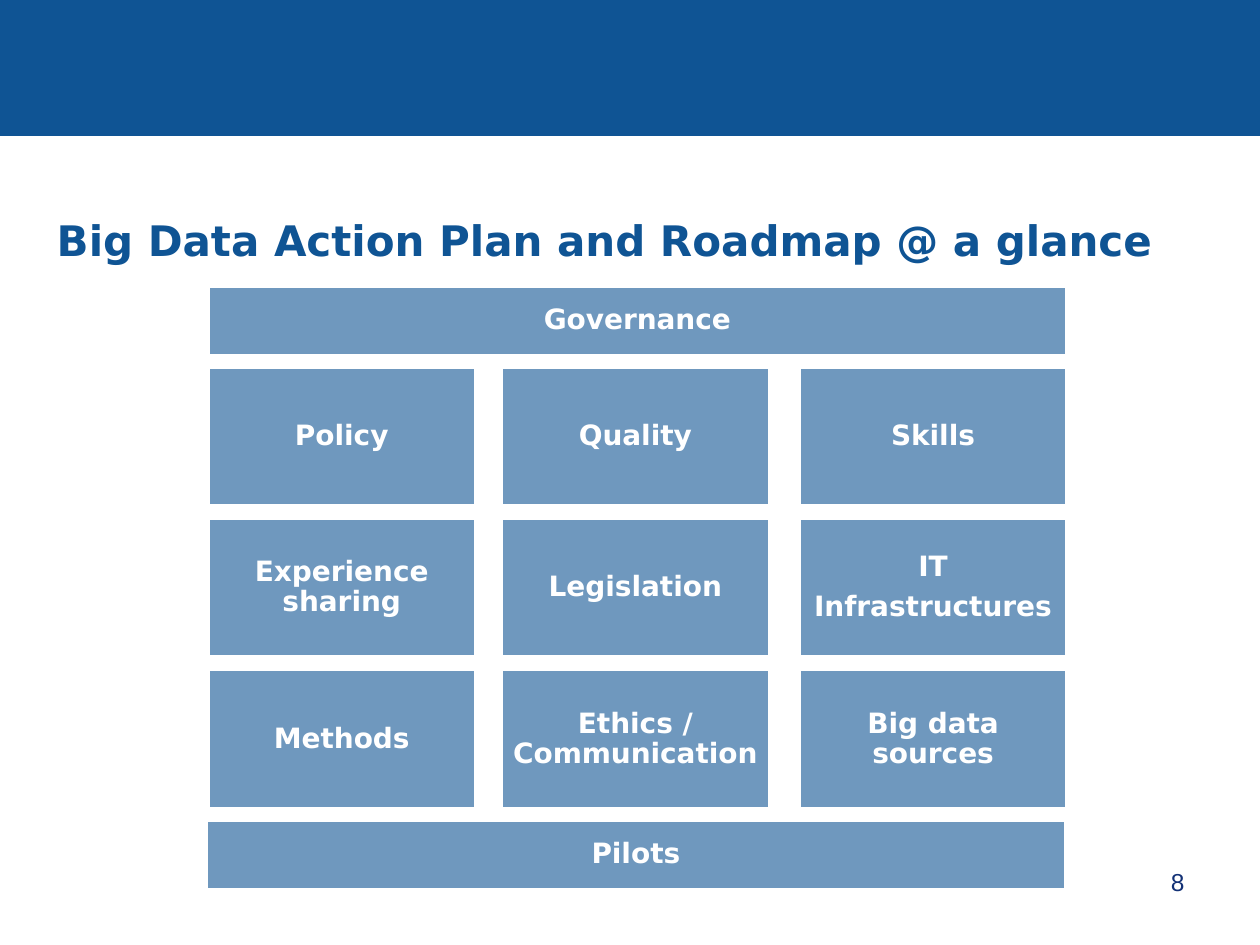
from lxml import etree
from pptx import Presentation
from pptx.dml.color import RGBColor
from pptx.enum.shapes import MSO_SHAPE
from pptx.enum.text import MSO_ANCHOR, MSO_AUTO_SIZE, PP_ALIGN
from pptx.oxml.ns import qn
from pptx.util import Cm, Pt

RECTANGLE = MSO_SHAPE.RECTANGLE
MIDDLE, TOP = MSO_ANCHOR.MIDDLE, MSO_ANCHOR.TOP
LEFT, CENTER, RIGHT = PP_ALIGN.LEFT, PP_ALIGN.CENTER, PP_ALIGN.RIGHT
NO_AUTOFIT = MSO_AUTO_SIZE.NONE

BLUE, NAVY, WHITE = "0F5494", "133176", "FFFFFF"
HEADING_FONT, NUMBER_FONT = "DejaVu Sans", "Arial"


def add_run(p, text, size, color, font=HEADING_FONT, bold=True):
    r = p.add_run()
    r.text = text
    r.font.name = font
    r.font.size = Pt(size)
    r.font.bold = bold
    r.font.color.rgb = RGBColor.from_string(color)


def add_box(left, top, width, height, line_color, line_width):
    """Add a blue rectangle without a shadow."""
    sp = s.shapes.add_shape(RECTANGLE, Cm(left), Cm(top), Cm(width), Cm(height))
    sp.shadow.inherit = False
    sp.fill.solid()
    sp.fill.fore_color.rgb = RGBColor.from_string(BLUE)
    sp.line.color.rgb = RGBColor.from_string(line_color)
    sp.line.width = Pt(line_width)
    return sp


prs = Presentation()
prs.slide_width, prs.slide_height = Cm(25.4), Cm(19.05)
s = prs.slides.add_slide(prs.slide_layouts[5])

# Header band
add_box(0, 0, 25.4, 2.74, BLUE, 0.75)

# Title with a hanging indent
title = s.shapes.title
title.left, title.top = Cm(0.89), Cm(3.53)
title.width, title.height = Cm(23.6), Cm(2.59)
tf = title.text_frame
tf.word_wrap = True
tf.auto_size = NO_AUTOFIT
tf.vertical_anchor = MIDDLE
p = tf.paragraphs[0]
p.alignment = LEFT
pPr = p._p.get_or_add_pPr()
pPr.set("marL", str(Cm(1)))
pPr.set("indent", str(-Cm(1)))
add_run(p, "Big Data Action Plan and Roadmap @ a glance", 24, BLUE)

# Action areas: a three by three grid between two wide bars
column_lefts = [4.19, 10.11, 16.11]
first_row_top, row_step = 7.4, 3.05
areas = [
    ["Policy", "Quality", "Skills"],
    ["Experience sharing", "Legislation", "IT\nInfrastructures"],
    ["Methods", "Ethics / Communication", "Big data sources"],
]
boxes = [
    (label, left, first_row_top + row * row_step, 5.4, 2.8)
    for row, labels in enumerate(areas)
    for left, label in zip(column_lefts, labels)
]
boxes += [
    ("Governance", 4.19, 5.77, 17.32, 1.4),
    ("Pilots", 4.16, 16.53, 17.32, 1.4),
]

for label, left, top, width, height in boxes:
    sp = add_box(left, top, width, height, WHITE, 2)
    color = sp.fill._xPr.find(qn("a:solidFill"))[0]
    etree.SubElement(color, qn("a:alpha")).set("val", "60000")
    tf = sp.text_frame
    tf.word_wrap = True
    tf.vertical_anchor = MIDDLE
    tf.margin_left = tf.margin_right = tf.margin_top = tf.margin_bottom = Cm(0.17)
    for i, text in enumerate(label.split("\n")):
        p = tf.add_paragraph() if i else tf.paragraphs[0]
        p.alignment = CENTER
        p.line_spacing = 0.9
        p.space_after = Pt(5.6)
        add_run(p, text, 16, WHITE)

# Page number
number = s.shapes.add_textbox(Cm(18.21), Cm(17.35), Cm(5.92), Cm(1.32))
tf = number.text_frame
tf.word_wrap = True
tf.vertical_anchor = TOP
p = tf.paragraphs[0]
p.alignment = RIGHT
add_run(p, "8", 14, NAVY, NUMBER_FONT, False)

prs.save("out.pptx")
